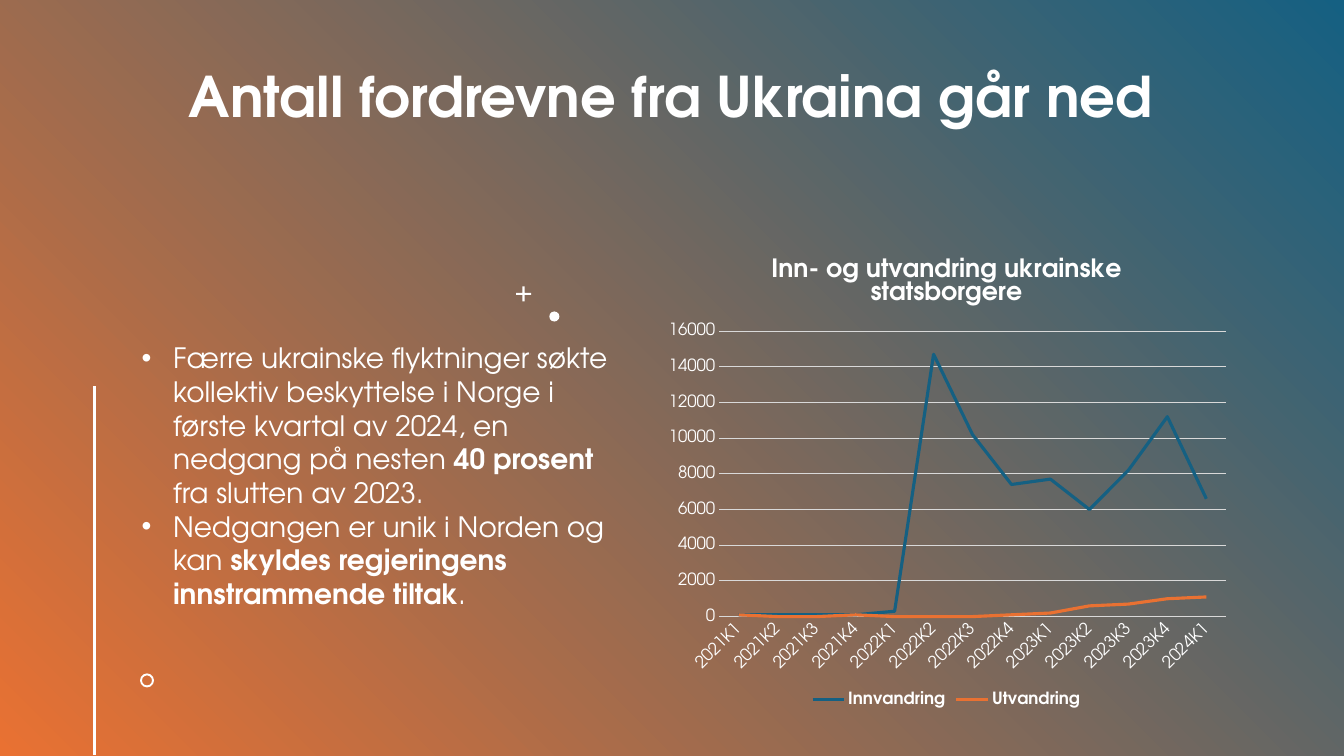
from dataclasses import dataclass

import lxml.etree
import pptx
import pptx.chart.data
import pptx.dml.color
import pptx.enum.chart
import pptx.enum.shapes
import pptx.enum.text
import pptx.oxml
import pptx.oxml.ns
import pptx.util

Pt = pptx.util.Pt
qn = pptx.oxml.ns.qn
Shapes = pptx.enum.shapes.MSO_SHAPE


def color(code):
    return pptx.dml.color.RGBColor.from_string(code)


@dataclass(frozen=True)
class Theme:
    font: str = "TeX Gyre Adventor"
    white = color("FFFFFF")
    grid = color("D9D9D9")
    blue = color("156082")
    orange = color("E97132")
    title_size = 40
    body_size = 20
    chart_title_size = 18
    chart_size = 12


THEME = Theme()
QUARTERS = [f"{year}K{quarter}" for year in range(2021, 2025) for quarter in range(1, 5)][:13]
MIGRATION = {
    "Innvandring": (100, 100, 100, 100, 300, 14700, 10200, 7400, 7700, 6000, 8200, 11200, 6600),
    "Utvandring": (100, 0, 0, 100, 0, 0, 0, 100, 200, 600, 700, 1000, 1100),
}
BULLETS = [
    [
        ("Færre ukrainske flyktninger søkte kollektiv beskyttelse i Norge i første "
         "kvartal av 2024, en nedgang på nesten ", False),
        ("40 prosent ", True),
        ("fra slutten av 2023.", False),
    ],
    [
        ("Nedgangen er unik i Norden og kan ", False),
        ("skyldes regjeringens innstrammende tiltak", True),
        (".", False),
    ],
]


def format_font(font, size, bold=False):
    font.name = THEME.font
    font.size = Pt(size)
    font.bold = bold
    font.color.rgb = THEME.white


def write_text(paragraph, content, size=THEME.body_size, bold=False, align=None, spacing=None):
    run = paragraph.add_run()
    run.text = content
    format_font(run.font, size, bold)
    if align is not None:
        paragraph.alignment = align
    if spacing is not None:
        paragraph.line_spacing = spacing


def place(shape, box):
    shape.left, shape.top, shape.width, shape.height = (Pt(length) for length in box)


def add_mark(slide, kind, box, adjustment=None):
    shape = slide.shapes.add_shape(kind, *(Pt(length) for length in box))
    shape.shadow.inherit = False
    shape.fill.solid()
    shape.fill.fore_color.rgb = THEME.white
    shape.line.fill.background()
    if adjustment is not None:
        shape.adjustments[0] = adjustment
    return shape


def add_backdrop(slide, box):
    backdrop = add_mark(slide, Shapes.RECTANGLE, box)
    backdrop.fill.gradient()
    backdrop.fill.gradient_angle = 225
    for stop, position, shade in zip(backdrop.fill.gradient_stops, (0, 1), (THEME.blue, THEME.orange)):
        stop.position = position
        stop.color.rgb = shade
    slide.shapes._spTree.insert(2, backdrop._element)


def add_title(slide, box):
    title = slide.shapes.title
    place(title, box)
    frame = title.text_frame
    frame.auto_size = pptx.enum.text.MSO_AUTO_SIZE.NONE
    frame.vertical_anchor = pptx.enum.text.MSO_ANCHOR.TOP
    write_text(frame.paragraphs[0], "Antall fordrevne fra Ukraina går ned", size=THEME.title_size,
               bold=True, align=pptx.enum.text.PP_ALIGN.CENTER, spacing=0.9)


def add_decoration(slide, box):
    left, top, width, height = box
    rule_top = top + 71.3
    rule = slide.shapes.add_connector(pptx.enum.shapes.MSO_CONNECTOR.STRAIGHT,
                                      Pt(left), Pt(rule_top), Pt(left), Pt(top + height))
    rule.line.color.rgb = THEME.white
    rule.line.width = Pt(2)
    lxml.etree.SubElement(rule._element.spPr, qn("a:effectLst"))
    add_mark(slide, Shapes.CROSS, (left + width - 31, top, 10.8, 10.8), 0.43)
    add_mark(slide, Shapes.OVAL, (left + width - 7.2, top + 18, 7.2, 7.2))
    add_mark(slide, Shapes.DONUT, (left + 32.4, top + 476.5 - 200, 10, 10), 0.14)


def add_bullets(slide, box):
    frame = slide.shapes.add_textbox(*(Pt(length) for length in box)).text_frame
    frame.word_wrap = True
    for index, pieces in enumerate(BULLETS):
        paragraph = frame.add_paragraph() if index else frame.paragraphs[0]
        for content, bold in pieces:
            write_text(paragraph, content, bold=bold)
        properties = paragraph._p.get_or_add_pPr()
        properties.set("marL", str(Pt(22.5)))
        properties.set("indent", str(-Pt(22.5)))
        lxml.etree.SubElement(properties, qn("a:buFont")).set("typeface", "Arial")
        lxml.etree.SubElement(properties, qn("a:buChar")).set("char", "•")


def set_plot_layout(chart, x, y, width, height):
    plot_area = chart._chartSpace.chart.plotArea
    for layout in plot_area.findall(qn("c:layout")):
        plot_area.remove(layout)
    layout = lxml.etree.Element(qn("c:layout"))
    manual = lxml.etree.SubElement(layout, qn("c:manualLayout"))
    values = {"layoutTarget": "inner", "xMode": "edge", "yMode": "edge",
              "x": x, "y": y, "w": width, "h": height}
    for name, value in values.items():
        lxml.etree.SubElement(manual, qn(f"c:{name}")).set("val", str(value))
    plot_area.insert(0, layout)


def format_axes(chart):
    for axis in (chart.category_axis, chart.value_axis):
        axis.major_tick_mark = axis.minor_tick_mark = pptx.enum.chart.XL_TICK_MARK.NONE
        format_font(axis.tick_labels.font, THEME.chart_size)
    category_line = chart.category_axis.format.line
    grid_line = chart.value_axis.major_gridlines.format.line
    for line in (category_line, grid_line):
        line.color.rgb = THEME.grid
        line.width = Pt(0.75)
    chart.category_axis._element.find(qn("c:txPr")).find(qn("a:bodyPr")).set("rot", "-2700000")
    chart.value_axis.format.line.fill.background()
    chart.value_axis.minimum_scale = 0
    chart.value_axis.maximum_scale = 16000
    chart.value_axis.major_unit = 2000


def add_migration_chart(slide, box):
    data = pptx.chart.data.CategoryChartData()
    data.categories = QUARTERS
    for name, values in MIGRATION.items():
        data.add_series(name, values)
    chart = slide.shapes.add_chart(pptx.enum.chart.XL_CHART_TYPE.LINE,
                                   *(Pt(length) for length in box), data).chart
    format_font(chart.font, THEME.chart_size)
    chart.has_title = True
    write_text(chart.chart_title.text_frame.paragraphs[0], "Inn- og utvandring ukrainske statsborgere",
               size=THEME.chart_title_size, bold=True, spacing=0.8)
    chart.has_legend = True
    chart.legend.position = pptx.enum.chart.XL_LEGEND_POSITION.BOTTOM
    chart.legend.include_in_layout = False
    format_font(chart.legend.font, THEME.chart_size, bold=True)
    chart.plots[0].vary_by_categories = False
    for series, shade in zip(chart.plots[0].series, (THEME.blue, THEME.orange)):
        series.smooth = False
        series.marker.style = pptx.enum.chart.XL_MARKER_STYLE.NONE
        series.format.line.color.rgb = shade
        series.format.line.width = Pt(2.25)
    format_axes(chart)
    set_plot_layout(chart, 0.11, 0.2, 0.87, 0.6)


def main():
    presentation = pptx.Presentation()
    presentation.slide_width, presentation.slide_height = Pt(960), Pt(540)
    slide = presentation.slides.add_slide(presentation.slide_layouts[5])
    add_backdrop(slide, (0, 0, 960, 540))
    add_title(slide, (88.5, 46, 781, 76))
    add_decoration(slide, (67.6, 204.5, 332, 335))
    add_bullets(slide, (94, 240, 350, 225))
    add_migration_chart(slide, (468, 168.5, 416, 340))
    presentation.save("out.pptx")


if __name__ == "__main__":
    main()
